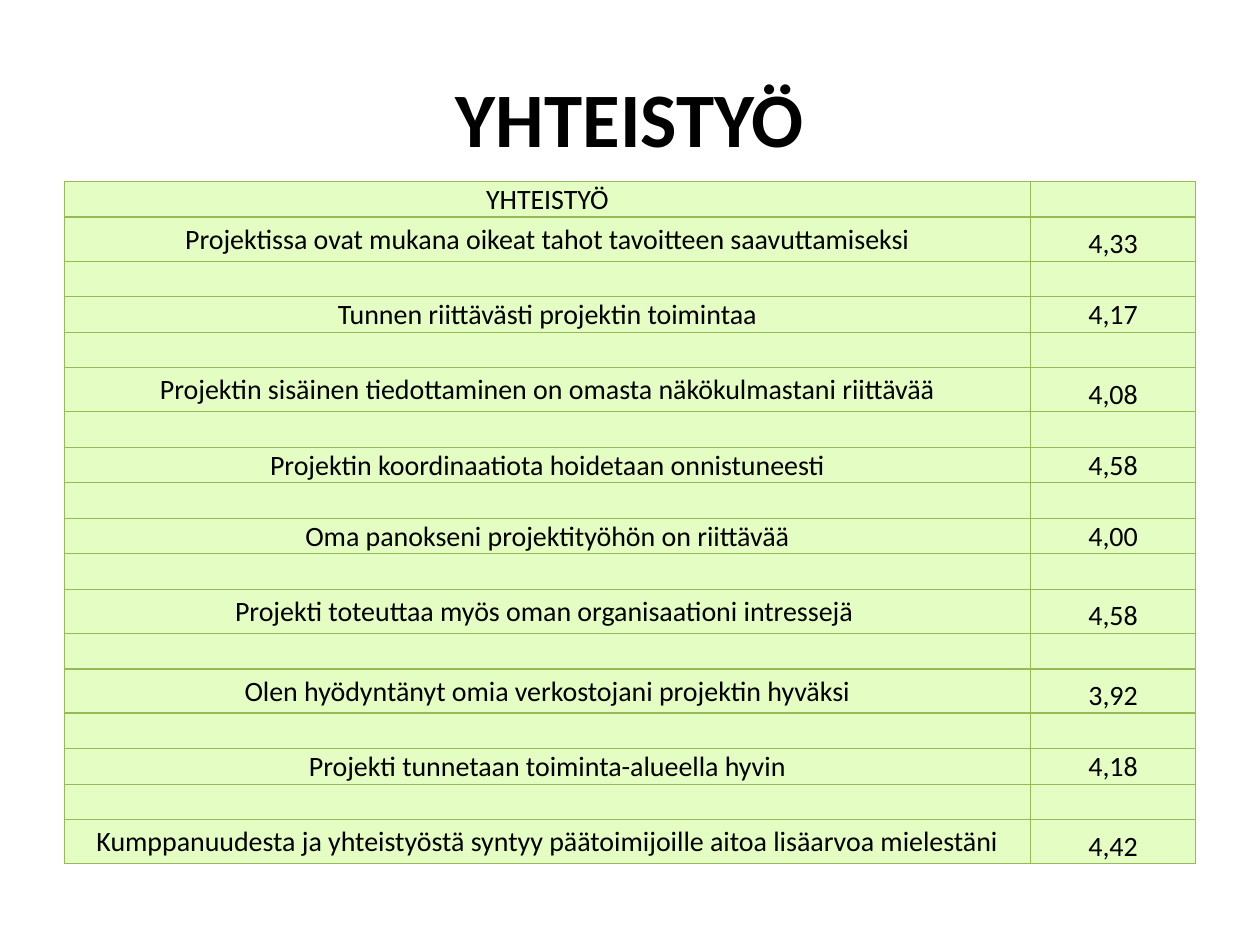
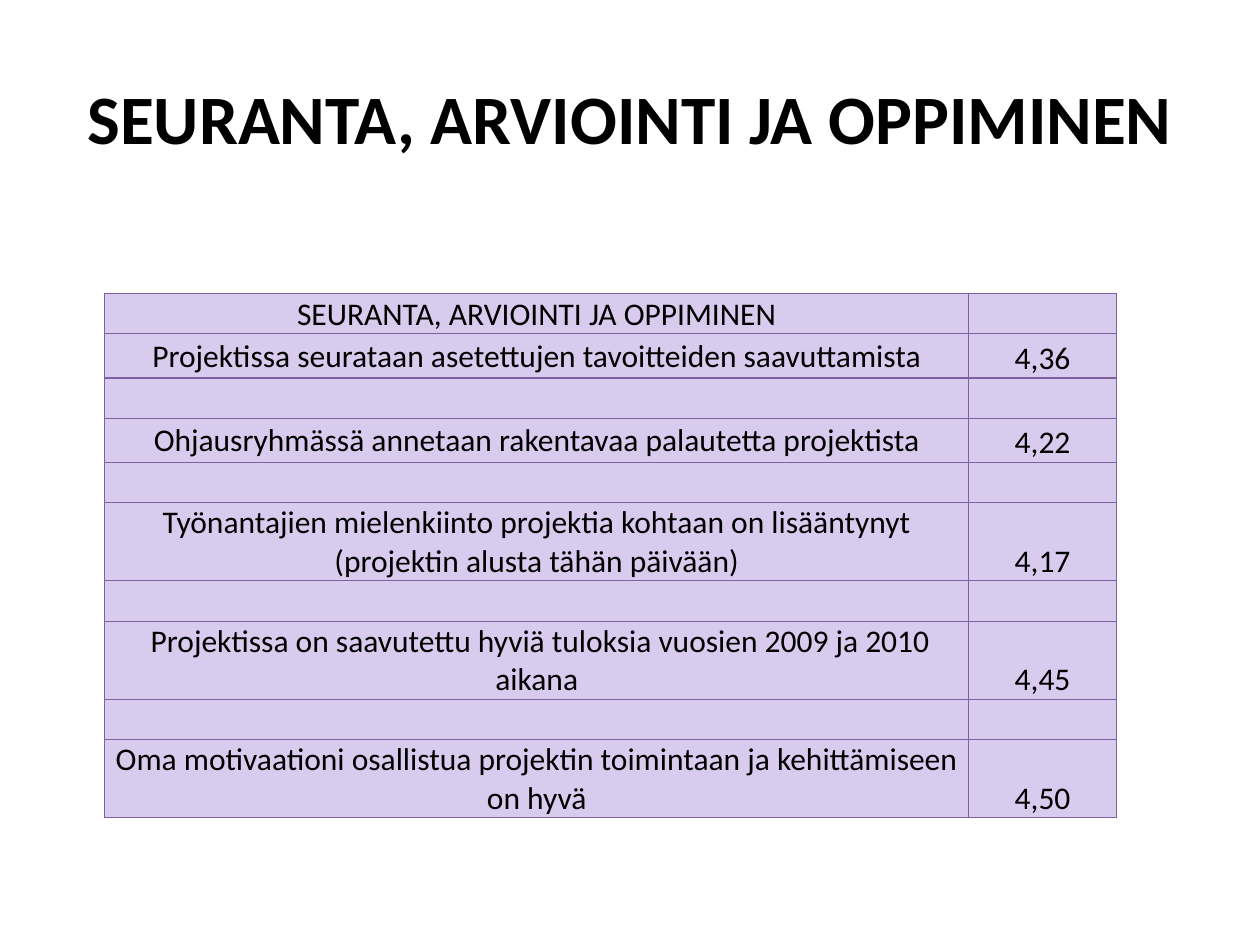
from dataclasses import dataclass
from pptx import Presentation
from pptx.dml.color import RGBColor as RGB
from pptx.enum.text import MSO_ANCHOR as Anchor, PP_ALIGN as Align
from pptx.oxml import parse_xml
from pptx.oxml.ns import nsdecls
from pptx.util import Inches, Pt


@dataclass
class Theme:
    face: str = "Calibri"
    ink: str = "000000"
    green: tuple = ("E4FDC2", "98B955")
    violet: tuple = ("D9CBEE", "7D60A0")
    big: float = 44
    fit: float = 39.6
    small: float = 16
    mid: float = 18
    line: float = 0.75
    pad: float = 0.01


class Deck:
    def __init__(self, theme):
        self.theme = theme
        self.file = Presentation()
        self.file.slide_width = Inches(10)
        self.file.slide_height = Inches(7.5)
        self.slide = None

    def style(self, para, size, bold=False):
        para.alignment = Align.CENTER
        font = para.font
        font.name, font.size, font.bold = self.theme.face, Pt(size), bold
        font.color.rgb = RGB.from_string(self.theme.ink)

    def page(self, title, size):
        self.slide = self.file.slides.add_slide(self.file.slide_layouts[5])
        head = self.slide.shapes.title
        head.left, head.top = Inches(0.5), Inches(0.3)
        head.width, head.height = Inches(9), Inches(1.25)
        head.text_frame.text = title
        head.text_frame.vertical_anchor = Anchor.MIDDLE
        self.style(head.text_frame.paragraphs[0], size, True)

    def border(self, cell, color):
        props = cell._tc.get_or_add_tcPr()
        for side in "LRTB":
            props.append(parse_xml(
                f'<a:ln{side} {nsdecls("a")} w="{Pt(self.theme.line)}">'
                f'<a:solidFill><a:srgbClr val="{color}"/></a:solidFill>'
                f'</a:ln{side}>'))

    def cell(self, cell, text, size, colors, anchor):
        fill, line = colors
        pad = Inches(self.theme.pad)
        cell.margin_left = cell.margin_right = cell.margin_top = pad
        cell.margin_bottom = 0
        cell.vertical_anchor = anchor
        self.border(cell, line)
        cell.fill.solid()
        cell.fill.fore_color.rgb = RGB.from_string(fill)
        cell.text = text
        self.style(cell.text_frame.paragraphs[0], size)

    def table(self, spot, widths, low, scores, title, size, colors):
        rows = [(title, "", low)]
        for score in scores:
            rows += [score, ("", "", low)]
        rows.pop()
        left, top = spot
        grid = self.slide.shapes.add_table(
            len(rows), 2, Inches(left), Inches(top), Inches(sum(widths)),
            Inches(sum(row[2] for row in rows))).table
        grid.first_row = grid.horz_banding = False
        for col, width in zip(grid.columns, widths):
            col.width = Inches(width)
        for line, (text, value, high) in zip(grid.rows, rows):
            line.height = Inches(high)
            self.cell(line.cells[0], text, size, colors, Anchor.MIDDLE)
            self.cell(line.cells[1], value, size, colors, Anchor.BOTTOM)


LOW, TALL, TWO = 0.28, 0.35, 0.62

TEAM = [
    ("Projektissa ovat mukana oikeat tahot tavoitteen saavuttamiseksi", "4,33", TALL),
    ("Tunnen riittävästi projektin toimintaa", "4,17", LOW),
    ("Projektin sisäinen tiedottaminen on omasta näkökulmastani riittävää", "4,08", TALL),
    ("Projektin koordinaatiota hoidetaan onnistuneesti", "4,58", LOW),
    ("Oma panokseni projektityöhön on riittävää", "4,00", LOW),
    ("Projekti toteuttaa myös oman organisaationi intressejä ", "4,58", TALL),
    ("Olen hyödyntänyt omia verkostojani projektin hyväksi", "3,92", TALL),
    ("Projekti tunnetaan toiminta-alueella hyvin", "4,18", LOW),
    ("Kumppanuudesta ja yhteistyöstä syntyy päätoimijoille aitoa lisäarvoa mielestäni",
     "4,42", TALL),
]

GROWTH = [
    ("Projektissa seurataan asetettujen tavoitteiden saavuttamista", "4,36", TALL),
    ("Ohjausryhmässä annetaan rakentavaa palautetta projektista", "4,22", TALL),
    ("Työnantajien mielenkiinto projektia kohtaan on lisääntynyt "
     "(projektin alusta tähän päivään)", "4,17", TWO),
    (" Projektissa on saavutettu hyviä tuloksia vuosien 2009 ja 2010 aikana", "4,45", TWO),
    ("Oma motivaationi osallistua projektin toimintaan ja kehittämiseen on hyvä",
     "4,50", TWO),
]


def main():
    theme = Theme()
    deck = Deck(theme)

    title = "YHTEISTYÖ"
    deck.page(title, theme.big)
    deck.table((0.51, 1.44), (7.67, 1.31), LOW, TEAM, title, theme.small, theme.green)

    title = "SEURANTA, ARVIOINTI JA OPPIMINEN"
    deck.page(title, theme.fit)
    deck.table((0.83, 2.33), (6.86, 1.17), 0.32, GROWTH, title, theme.mid, theme.violet)

    deck.file.save("out.pptx")


if __name__ == "__main__":
    main()
